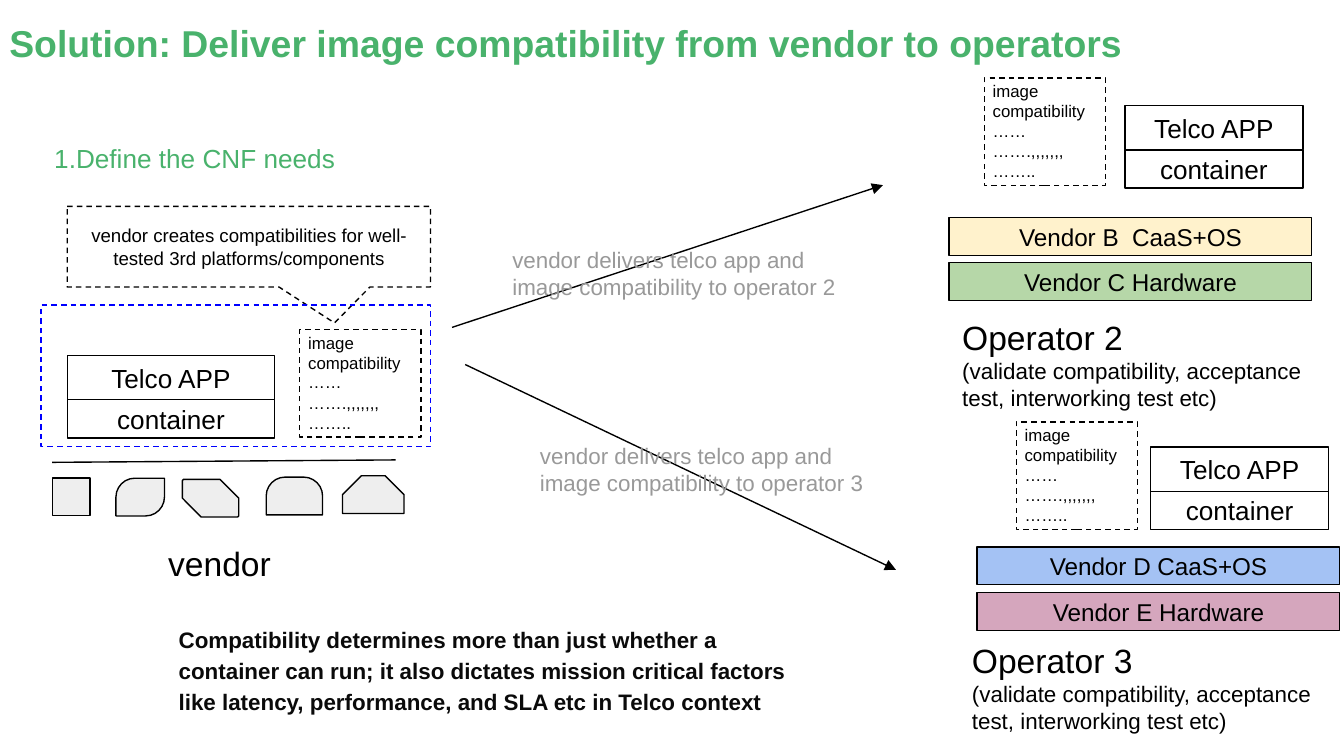
from lxml import etree
from pptx import Presentation
from pptx.dml.color import RGBColor
from pptx.enum.dml import MSO_LINE
from pptx.enum.shapes import MSO_CONNECTOR, MSO_SHAPE
from pptx.enum.text import MSO_ANCHOR, MSO_AUTO_SIZE, PP_ALIGN
from pptx.oxml.ns import qn
from pptx.util import Pt

LEFT, CENTER = PP_ALIGN.LEFT, PP_ALIGN.CENTER
TOP, MIDDLE = MSO_ANCHOR.TOP, MSO_ANCHOR.MIDDLE
RECT, DASH = MSO_SHAPE.RECTANGLE, MSO_LINE.DASH
THEME = {
    "font": "Arial",
    "green": "49B26C", "black": "000000", "ink": "0A0A0A", "grey": "999999",
    "blue": "0000FF", "white": "FFFFFF", "part": "EEEEEE",
    "yellow": "FFF2CC", "mint": "B6D7A8", "sky": "A4C2F4", "rose": "D5A6BD",
    "title": 20, "name": 18, "heading": 14, "bar": 13, "body": 12,
    "callout": 10, "card": 9, "line": 0.75,
}


def write(shape, lines, color="black", align=LEFT, anchor=TOP, inset=7.2, bold=False):
    """Fill a shape with (text, theme size) paragraphs."""
    frame = shape.text_frame
    settings = {"word_wrap": True, "auto_size": MSO_AUTO_SIZE.NONE, "vertical_anchor": anchor}
    for side in ("left", "top", "right", "bottom"):
        settings[f"margin_{side}"] = Pt(inset)
    for name, value in settings.items():
        setattr(frame, name, value)
    for index, (text, size) in enumerate(lines):
        para = frame.add_paragraph() if index else frame.paragraphs[0]
        para.alignment = align
        span = para.add_run()
        span.text = text
        span.font.color.rgb = RGBColor.from_string(THEME[color])
        for name, value in {"name": THEME["font"], "size": Pt(THEME[size]), "bold": bold}.items():
            setattr(span.font, name, value)
    return frame


def add_box(shapes, kind, at, fill=None, line="black", dash=None):
    """Add an outlined preset shape."""
    box = shapes.add_shape(kind, *map(Pt, at))
    box.shadow.inherit = False
    if fill:
        box.fill.solid()
        box.fill.fore_color.rgb = RGBColor.from_string(THEME[fill])
    else:
        box.fill.background()
    box.line.color.rgb = RGBColor.from_string(THEME[line])
    box.line.width = Pt(THEME["line"])
    if dash:
        box.line.dash_style = dash
    return box


deck = Presentation()
deck.slide_width, deck.slide_height = Pt(720), Pt(405)
page = deck.slides.add_slide(deck.slide_layouts[5])
shapes = page.shapes

# Title
title = shapes.title
title.left, title.top, title.width, title.height = Pt(5), Pt(0), Pt(659), Pt(45.5)
write(title, [("Solution: Deliver image compatibility from vendor to operators", "title")],
      "green", anchor=MIDDLE, inset=0, bold=True)

# App on container: vendor, operator 2, operator 3
for left, top, width in [(36, 190.4, 111.2), (602.7, 56.5, 95.3), (616.5, 239.4, 95.3)]:
    for text, offset, height in [("container", 23.8, 20.4), ("Telco APP", 0, 23.8)]:
        box = add_box(shapes, RECT, (left, top + offset, width, height))
        write(box, [(text, "heading")], align=CENTER, anchor=MIDDLE)

# Image compatibility cards: vendor, operator 2, operator 3
for left, top in [(160.6, 176.6), (527.3, 41.8), (544.4, 226.1)]:
    card = page.shapes.add_group_shape().shapes
    add_box(card, RECT, (left, top, 65, 57.6), "white", dash=DASH)
    for offset, height, texts in [(-5.8, 36, ["image compatibility"]),
                                  (15.5, 47.5, ["……", "…….,,,,,,,", "…….."])]:
        label = card.add_textbox(Pt(left - 2.6), Pt(top + offset), Pt(65), Pt(height))
        write(label, [(text, "card") for text in texts])

# Platform bars of both operators
for left, top, text, fill in [
    (508.4, 116.6, "Vendor B  CaaS+OS", "yellow"),
    (508.4, 140.7, "Vendor C Hardware", "mint"),
    (523.4, 293.1, "Vendor D CaaS+OS", "sky"),
    (523.4, 317.5, "Vendor E Hardware", "rose"),
]:
    bar = add_box(shapes, RECT, (left, top, 194.4, 20.2), fill)
    write(bar, [(text, "bar")], align=CENTER, anchor=MIDDLE)

# Vendor's component shapes
for kind, left, top, width, adjustments in [
    (RECT, 28, 256.1, 20.3, []),
    (MSO_SHAPE.ROUND_2_DIAG_RECTANGLE, 62.1, 256.2, 26, [0.5, 0]),
    (MSO_SHAPE.SNIP_2_DIAG_RECTANGLE, 97.7, 256.8, 30.2, [0.03, 0.5]),
    (MSO_SHAPE.ROUND_2_SAME_RECTANGLE, 142.6, 255.6, 30.2, [0.5, 0]),
    (MSO_SHAPE.SNIP_2_SAME_RECTANGLE, 183.5, 254.9, 33, [0.5, 0]),
]:
    part = add_box(shapes, kind, (left, top, width, 20.2), "part")
    for index, value in enumerate(adjustments):
        part.adjustments[index] = value

# Callout and frame around the vendor's delivery
callout = add_box(shapes, MSO_SHAPE.ROUNDED_RECTANGULAR_CALLOUT, (36, 110.6, 194.6, 43.2), dash=DASH)
for index, value in enumerate([0.236, 0.945, 0]):
    callout.adjustments[index] = value
write(callout, [("vendor creates compatibilities for well-tested 3rd platforms/components", "callout")],
      align=CENTER, anchor=MIDDLE)
add_box(shapes, RECT, (22, 163.5, 208.8, 75.8), line="blue", dash=DASH)

# Shelf line and delivery arrows
for start, end, arrow in [
    ((28, 247.7), (212, 246.4), False),
    ((242.2, 175.4), (473, 99.2), True),
    ((249.2, 195.3), (480, 305.3), True),
]:
    line = shapes.add_connector(MSO_CONNECTOR.STRAIGHT, *map(Pt, start + end))
    line.line.color.rgb = RGBColor.from_string(THEME["black"])
    line.line.width = Pt(THEME["line"])
    if arrow:
        etree.SubElement(line.line._get_or_add_ln(), qn("a:tailEnd"), type="triangle")
    etree.SubElement(line._element.spPr, qn("a:effectLst"))

# Free-standing labels
validation = ("(validate compatibility, acceptance test, interworking test etc)", "body")
delivery = "vendor delivers telco app and image compatibility to operator "
for at, lines, color in [
    ((22, 69.1, 236, 31.7), [("1.Define the CNF needs", "heading")], "green"),
    ((83, 283.7, 73.4, 36), [("vendor", "name")], "black"),
    ((267.4, 124.8, 194.4, 43.9), [(delivery + "2", "body")], "grey"),
    ((282.2, 229.6, 194.4, 43.9), [(delivery + "3", "body")], "grey"),
    ((508.4, 162.6, 214, 65.5), [("Operator 2", "name"), validation], "black"),
    ((513.6, 335.8, 214, 65.5), [("Operator 3", "name"), validation], "black"),
]:
    write(shapes.add_textbox(*map(Pt, at)), lines, color)

# Takeaway
takeaway = shapes.add_textbox(Pt(88.6), Pt(326.2), Pt(351.4), Pt(62.6))
frame = write(takeaway, [(
    "Compatibility determines more than just whether a container can run; it also dictates "
    "mission critical factors like latency, performance, and SLA etc in Telco context", "body")],
    "ink", bold=True)
frame.paragraphs[0].line_spacing = 1.15

deck.save("out.pptx")
